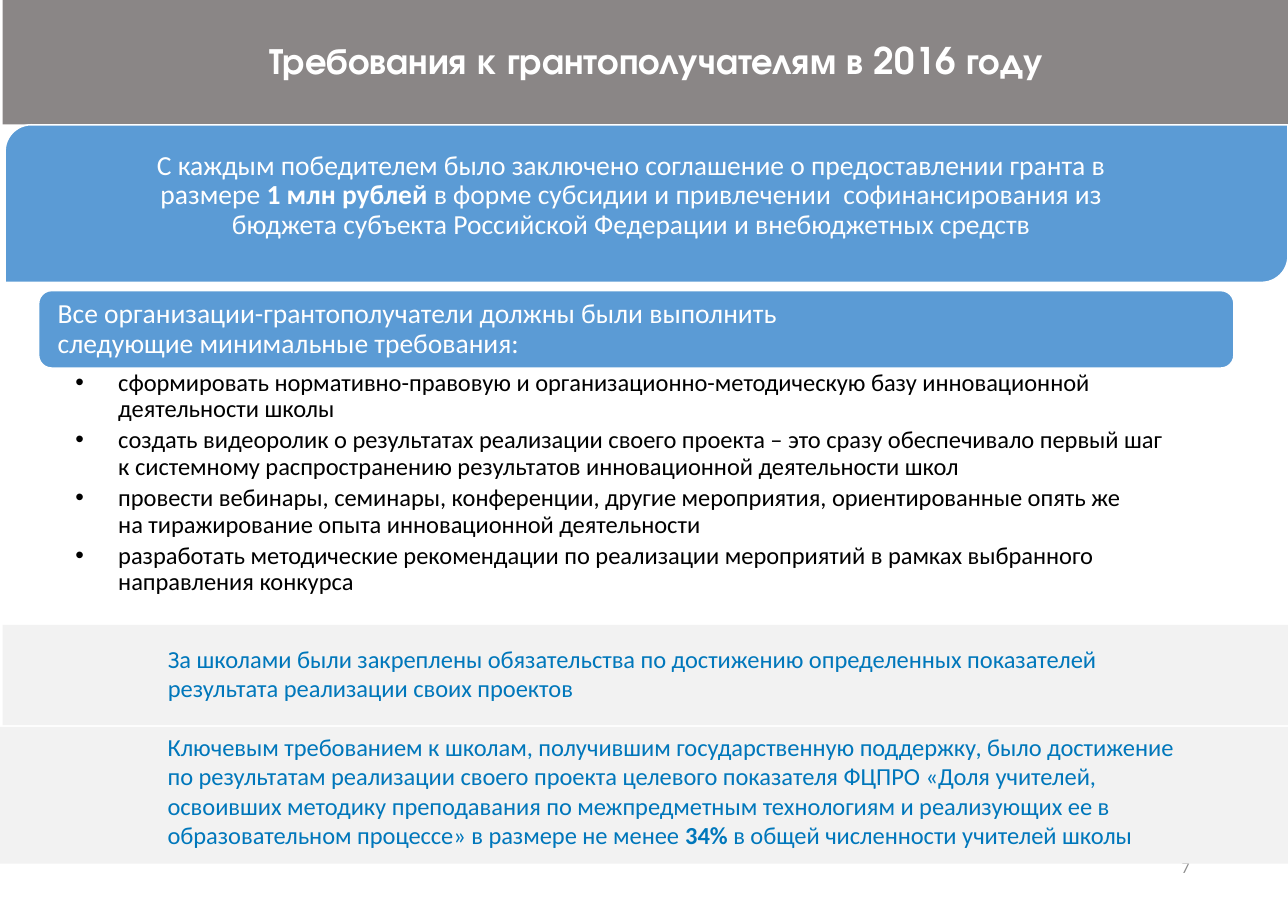
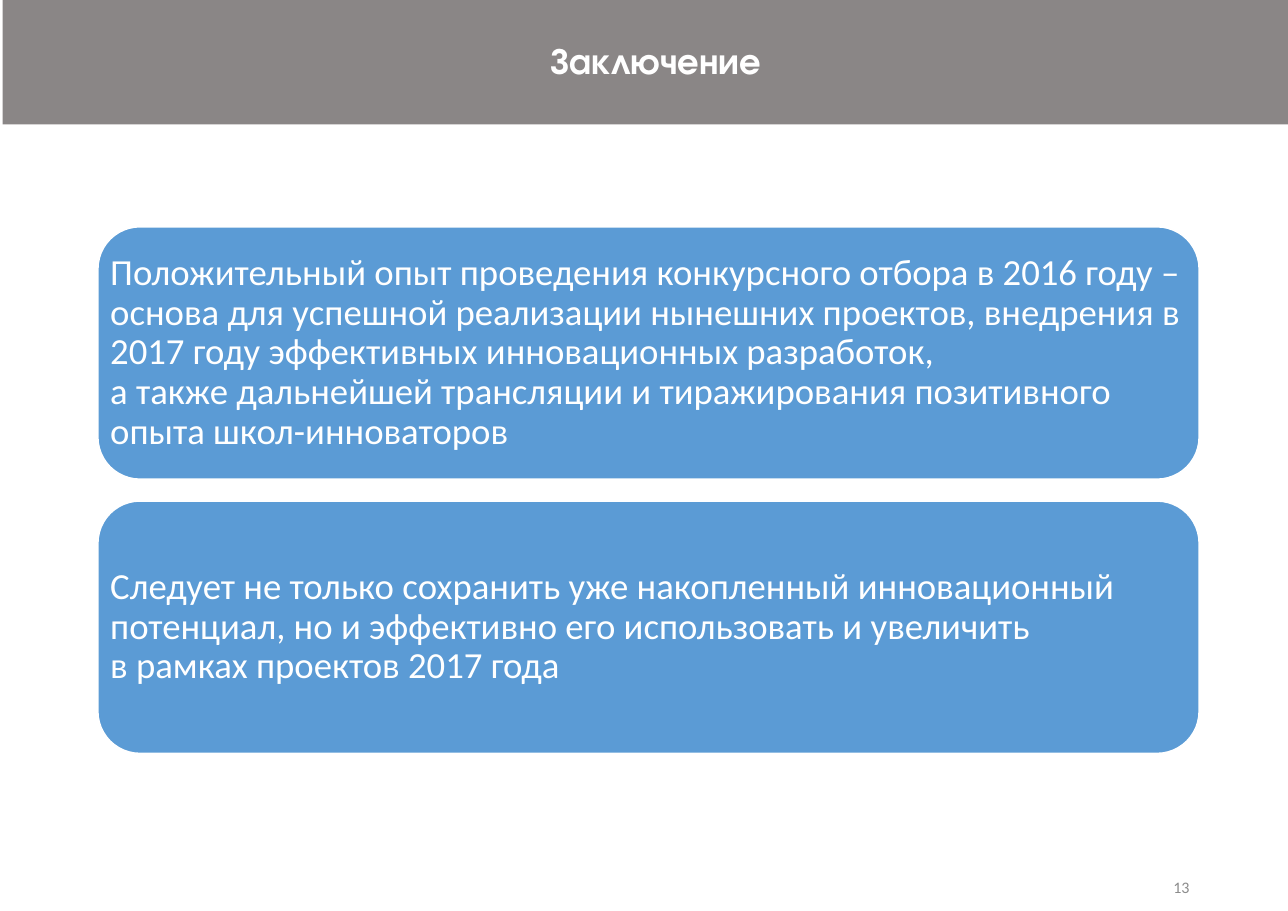
import pptx
import pptx.util
import pptx.dml.color
import pptx.enum.shapes
import pptx.enum.text
import pptx.oxml.ns
from lxml import etree

Pt = pptx.util.Pt
qn = pptx.oxml.ns.qn
SHAPE = pptx.enum.shapes.MSO_SHAPE
ALIGN = pptx.enum.text.PP_ALIGN
ANCHOR = pptx.enum.text.MSO_ANCHOR

GREY, BLUE, PALE, WHITE = "767171", "5B9BD5", "F2F2F2", "FFFFFF"
INK, ACCENT, FAINT = "000000", "0077BB", "8C8C8C"

deck = pptx.Presentation()
deck.slide_width = pptx.util.Inches(11.69)
deck.slide_height = pptx.util.Inches(8.27)
column, row = deck.slide_width / 100, deck.slide_height / 100


def color(value):
    return pptx.dml.color.RGBColor.from_string(value)


def add_block(slide, at, paragraphs, kind=None, fill=None, outline=None, ink=WHITE,
              size=18, face="Calibri", bold=False, align=ALIGN.LEFT, anchor=ANCHOR.MIDDLE,
              insets=(7.2, 3.6, 7.2, 3.6), spacing=None, after=0, bullet=None):
    left, top, width, height = at
    box = [round(left * column), round(top * row), round(width * column), round(height * row)]
    if kind is None:
        block = slide.shapes.add_textbox(*box)
    else:
        block = slide.shapes.add_shape(kind, *box)
        block.shadow.inherit = False
        block.fill.solid()
        block.fill.fore_color.rgb = color(fill)
        if outline:
            block.line.color.rgb = color(outline)
            block.line.width = Pt(1)
        else:
            block.line.fill.background()

    frame = block.text_frame
    margins = zip(("margin_left", "margin_top", "margin_right", "margin_bottom"), map(Pt, insets))
    for name, value in {"word_wrap": True, "vertical_anchor": anchor, **dict(margins)}.items():
        setattr(frame, name, value)

    for index, wording in enumerate(paragraphs):
        paragraph = frame.add_paragraph() if index else frame.paragraphs[0]
        layout = {"alignment": align, "line_spacing": spacing, "space_after": Pt(after)}
        for name, value in layout.items():
            setattr(paragraph, name, value)
        if bullet:
            properties = paragraph._p.get_or_add_pPr()
            properties.set("marL", str(Pt(28)))
            properties.set("indent", str(-Pt(28)))
            etree.SubElement(properties, qn("a:buFont"), typeface="Arial")
            etree.SubElement(properties, qn("a:buChar"), char=bullet)
        for part, phrase in enumerate(wording.split("**")):
            for line, words in enumerate(phrase.split("\n")):
                if line:
                    line_break = paragraph._p.add_br()
                    etree.SubElement(line_break, qn("a:rPr"), sz=str(size * 100))
                run = paragraph.add_run()
                run.text = words
                letters = {"size": Pt(size), "name": face, "bold": bold or part % 2 == 1}
                for name, value in letters.items():
                    setattr(run.font, name, value)
                run.font.color.rgb = color(ink)
    return block


header_style = dict(kind=SHAPE.RECTANGLE, fill=GREY, size=24, face="TeX Gyre Adventor",
                    bold=True, align=ALIGN.CENTER, insets=(21, 3.6, 7.2, 3.6), spacing=0.9)
number_style = dict(ink=FAINT, size=10.5, align=ALIGN.RIGHT)
panel_style = dict(fill=BLUE, outline=WHITE, spacing=0.9)
band_style = dict(kind=SHAPE.RECTANGLE, fill=PALE, ink=ACCENT, size=16)

number_style["size"] = 10.5
slides = []
for title, number, number_top in (
    ("Требования к грантополучателям в 2016 году", "7", 92.6),
    ("Заключение", "13", 94.8),
):
    slide = deck.slides.add_slide(deck.slide_layouts[6])
    header = add_block(slide, (0.2, 0, 99.8, 13.65), [title], **header_style)
    tint = header._element.spPr.find(".//" + qn("a:srgbClr"))
    etree.SubElement(tint, qn("a:alpha"), val="85000")
    add_block(slide, (70.7, number_top, 22.5, 5.2), [number], **number_style)
    slides.append(slide)
requirements, conclusion = slides

add_block(
    requirements, (0.4, 13.7, 99.6, 17.3),
    ["С каждым победителем было заключено соглашение о предоставлении гранта в размере "
     "**1 млн рублей **в форме субсидии и привлечении  софинансирования из бюджета "
     "субъекта Российской Федерации и внебюджетных средств"],
    kind=SHAPE.ROUND_2_DIAG_RECTANGLE, align=ALIGN.CENTER, insets=(62, 0, 82, 10), **panel_style)

add_block(
    requirements, (3, 31.9, 92.8, 8.5),
    ["Все организации-грантополучатели должны были выполнить\n"
     "следующие минимальные требования:"],
    kind=SHAPE.ROUNDED_RECTANGLE, insets=(10, 3, 5, 3), **panel_style)

add_block(
    requirements, (3, 40.4, 92.8, 26.5),
    ["сформировать нормативно-правовую и организационно-методическую базу инновационной "
     "деятельности школы",
     "создать видеоролик о результатах реализации своего проекта – это сразу обеспечивало "
     "первый шаг\nк системному распространению результатов инновационной деятельности школ",
     "провести вебинары, семинары, конференции, другие мероприятия, ориентированные опять же\n"
     "на тиражирование опыта инновационной деятельности",
     "разработать методические рекомендации по реализации мероприятий в рамках выбранного "
     "направления конкурса"],
    ink=INK, size=16, anchor=ANCHOR.TOP, insets=(24, 1.4, 9, 1.4),
    spacing=0.9, after=3.2, bullet="•")

for at, insets, wording in (
    ((0.2, 68.6, 99.8, 11), (108, 0, 65, 2),
     "За школами были закреплены обязательства по достижению определенных показателей "
     "результата реализации своих проектов"),
    ((0, 79.8, 100, 15), (109.5, 0, 65, 6),
     "Ключевым требованием к школам, получившим государственную поддержку, было достижение\n"
     "по результатам реализации своего проекта целевого показателя ФЦПРО «Доля учителей, "
     "освоивших методику преподавания по межпредметным технологиям и реализующих ее в "
     "образовательном процессе» в размере не менее **34% **в общей численности учителей школы"),
):
    add_block(requirements, at, [wording], insets=insets, **band_style)

panel_height, panel_gap = 27.7, 2.4
for index, wording in enumerate((
    "Положительный опыт проведения конкурсного отбора в 2016 году – основа для успешной "
    "реализации нынешних проектов, внедрения в 2017 году эффективных инновационных разработок,\n"
    "а также дальнейшей трансляции и тиражирования позитивного опыта школ-инноваторов",
    "Следует не только сохранить уже накопленный инновационный потенциал, но и эффективно "
    "его использовать и увеличить\nв рамках проектов 2017 года",
)):
    add_block(conclusion, (7.6, 24.9 + index * (panel_height + panel_gap), 85.5, panel_height),
              [wording], kind=SHAPE.ROUNDED_RECTANGLE, size=24, insets=(0, 0, 0, 0), **panel_style)

deck.save("out.pptx")
